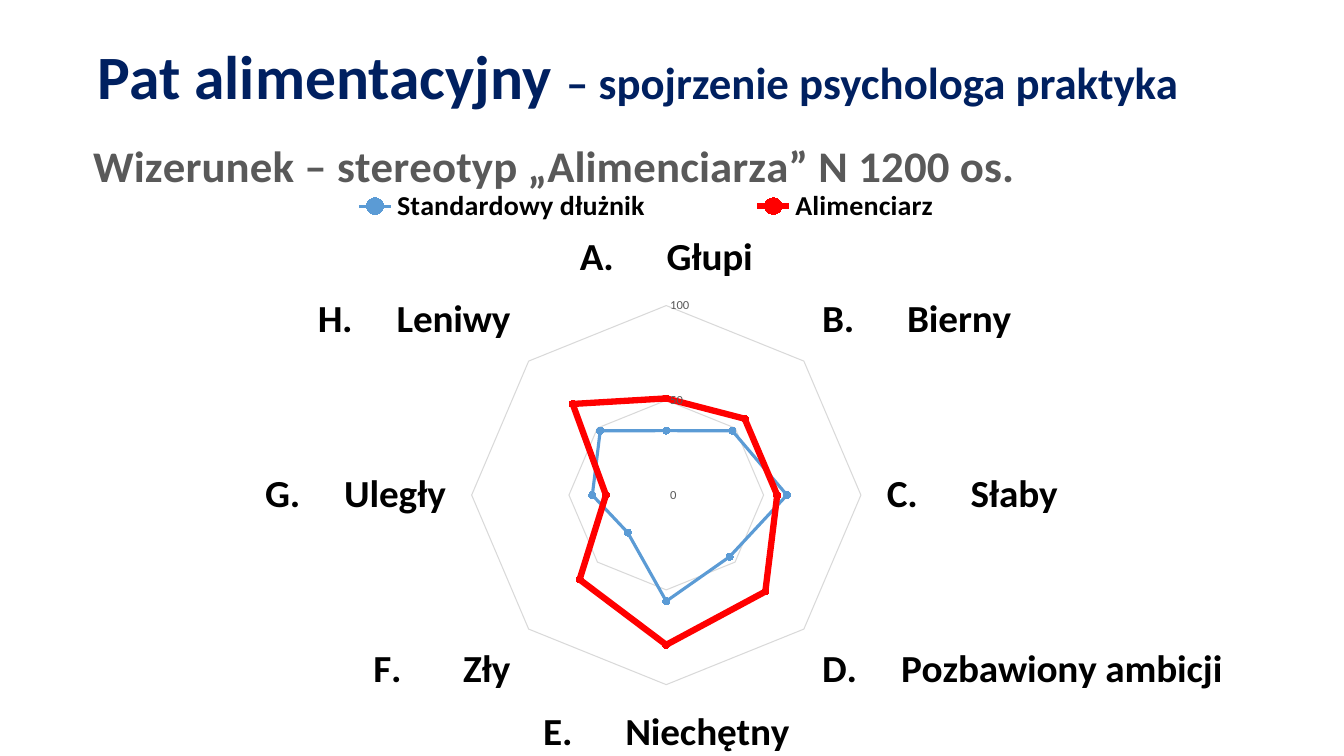
"""Builds a slide with a radar chart comparing two debtor stereotypes."""
from dataclasses import dataclass
from typing import Any, NamedTuple

from lxml.etree import SubElement
from pptx import Presentation
from pptx.chart.data import CategoryChartData
from pptx.dml.color import RGBColor
from pptx.enum.chart import XL_CHART_TYPE, XL_LEGEND_POSITION, XL_MARKER_STYLE, XL_TICK_MARK
from pptx.enum.text import MSO_ANCHOR, MSO_AUTO_SIZE, PP_ALIGN
from pptx.oxml import parse_xml
from pptx.oxml.ns import nsdecls, qn
from pptx.util import Inches, Pt

COLOURS = {
    "navy": "002060",
    "black": "000000",
    "grey": "595959",
    "grid": "D9D9D9",
    "blue": "5B9BD5",
    "red": "FF0000",
}
FONT = "Calibri"
SLIDE_WIDTH, SLIDE_HEIGHT = Inches(13.33), Inches(7.5)


class Share(NamedTuple):
    """Left, top, width and height as percentages of the container."""
    left: float
    top: float
    width: float | None = None
    height: float | None = None


class Trait(NamedTuple):
    """A radar axis: its name, label gap and the two scores."""
    name: str
    gap: int
    debtor: int
    alimony: int


@dataclass
class Profile:
    """A radar series and its look."""
    name: str
    field: str
    colour: str
    weight: float


TITLE_SHARE = Share(6.9, 5.33, 86.27, 10.27)
CHART_SHARE = Share(5.18, 15.6, 87.92, 84.4)
PLOT_SHARE = Share(33.3, 30.2, 34.4, 61)
HEADING_SHARE = Share(1.3, 1.5)
LEGEND_SHARE = Share(15.8, 10.2, 66, 8)

TRAITS = [
    Trait("Głupi", 5, 34, 51),
    Trait("Bierny", 5, 48, 57),
    Trait("Słaby", 5, 62, 57),
    Trait("Pozbawiony ambicji", 4, 46, 72),
    Trait("Niechętny", 5, 56, 79),
    Trait("Zły", 6, 28, 63),
    Trait("Uległy", 4, 38, 31),
    Trait("Leniwy", 4, 48, 68),
]
PROFILES = [
    Profile("Standardowy dłużnik", "debtor", "blue", 2.25),
    Profile("Alimenciarz", "alimony", "red", 4.5),
]
TITLE_SPANS = [("Pat alimentacyjny ", 44), ("– spojrzenie psychologa praktyka", 32)]


def colour(name: str) -> RGBColor:
    """Looks up a named colour."""
    return RGBColor.from_string(COLOURS[name])


def style_font(font: Any, size: float, tint: str, bold: bool = False) -> None:
    """Applies face, size, weight and colour to a font."""
    for key, value in {"name": FONT, "size": Pt(size), "bold": bold}.items():
        setattr(font, key, value)
    font.color.rgb = colour(tint)


def style_line(line: Any, tint: str, weight: float) -> None:
    """Applies colour and width to a line."""
    line.color.rgb = colour(tint)
    line.width = Pt(weight)


def slide_box(share: Share) -> list[int]:
    """Turns a share of the slide into lengths."""
    sizes = (SLIDE_WIDTH, SLIDE_HEIGHT) * 2
    return [round(size * part / 100) for size, part in zip(sizes, share)]


def place_part(part: Any, share: Share, inner: bool = False) -> None:
    """Fixes a chart part at a share of the chart."""
    for layout in part.findall(qn("c:layout")):
        part.remove(layout)
    layout = parse_xml(f"<c:layout {nsdecls('c')}><c:manualLayout/></c:layout>")
    manual = layout[0]
    values = {"layoutTarget": "inner"} if inner else {}
    values |= {"xMode": "edge", "yMode": "edge"}
    values |= {key: f"{value / 100:.3f}" for key, value in zip("xywh", share) if value is not None}
    for key, value in values.items():
        SubElement(manual, qn(f"c:{key}")).set("val", value)
    overlay = part.find(qn("c:overlay"))
    part.insert(0 if overlay is None else part.index(overlay), layout)


def write_title(box: Any) -> None:
    """Moves and fills the title placeholder."""
    for key, value in zip(("left", "top", "width", "height"), slide_box(TITLE_SHARE)):
        setattr(box, key, value)
    frame = box.text_frame
    settings = {
        "word_wrap": True,
        "auto_size": MSO_AUTO_SIZE.NONE,
        "vertical_anchor": MSO_ANCHOR.MIDDLE,
    }
    margins = {f"margin_{side}": Inches(0.05) for side in ("left", "top", "right", "bottom")}
    for key, value in (settings | margins).items():
        setattr(frame, key, value)
    para = frame.paragraphs[0]
    para.alignment, para.line_spacing = PP_ALIGN.LEFT, 0.9
    for text, size in TITLE_SPANS:
        span = para.add_run()
        span.text = text
        style_font(span.font, size, "navy", True)


def radar_data() -> CategoryChartData:
    """Collects lettered categories and scores."""
    data = CategoryChartData()
    data.categories = [
        f"{letter}.{' ' * trait.gap} {trait.name}" for letter, trait in zip("ABCDEFGH", TRAITS)
    ]
    for profile in PROFILES:
        data.add_series(profile.name, [getattr(trait, profile.field) for trait in TRAITS])
    return data


def style_axes(chart: Any) -> None:
    """Formats the spokes and the scale."""
    spokes, scale = chart.category_axis, chart.value_axis
    for axis in (spokes, scale):
        axis.major_tick_mark = axis.minor_tick_mark = XL_TICK_MARK.NONE
    spokes.has_major_gridlines = False
    style_font(spokes.tick_labels.font, 28, "black", True)
    style_line(spokes.format.line, "grid", 0.75)
    limits = {"minimum_scale": 0, "maximum_scale": 100, "major_unit": 50}
    for key, value in (limits | {"has_major_gridlines": True}).items():
        setattr(scale, key, value)
    style_font(scale.tick_labels.font, 9, "grey")
    scale.format.line.fill.background()
    style_line(scale.major_gridlines.format.line, "grid", 0.75)


def style_profiles(chart: Any) -> None:
    """Formats the lines and markers of the series."""
    for series, profile in zip(chart.plots[0].series, PROFILES):
        series.smooth = False
        style_line(series.format.line, profile.colour, profile.weight)
        marker = series.marker
        marker.style, marker.size = XL_MARKER_STYLE.CIRCLE, 5
        marker.format.fill.solid()
        marker.format.fill.fore_color.rgb = colour(profile.colour)
        style_line(marker.format.line, profile.colour, 0.75)


def draw_radar(page: Any) -> None:
    """Adds the radar chart with its heading and legend."""
    frame = page.shapes.add_chart(
        XL_CHART_TYPE.RADAR_MARKERS, *slide_box(CHART_SHARE), radar_data()
    )
    chart = frame.chart
    style_font(chart.font, 10, "black")
    chart.plots[0].vary_by_categories = False
    heading = chart.chart_title
    heading.text_frame.text = "Wizerunek – stereotyp „Alimenciarza” N 1200 os."
    style_font(heading.text_frame.paragraphs[0].runs[0].font, 32, "grey", True)
    chart.has_legend = True
    legend = chart.legend
    legend.position, legend.include_in_layout = XL_LEGEND_POSITION.TOP, False
    style_font(legend.font, 20, "black", True)
    style_axes(chart)
    style_profiles(chart)
    space = chart.element
    place_part(space.find(f".//{qn('c:plotArea')}"), PLOT_SHARE, True)
    place_part(space.find(f"{qn('c:chart')}/{qn('c:title')}"), HEADING_SHARE)
    place_part(space.find(f".//{qn('c:legend')}"), LEGEND_SHARE)


def main() -> None:
    """Builds and saves the deck."""
    deck = Presentation()
    deck.slide_width, deck.slide_height = SLIDE_WIDTH, SLIDE_HEIGHT
    page = deck.slides.add_slide(deck.slide_layouts[5])
    write_title(page.shapes.title)
    draw_radar(page)
    deck.save("out.pptx")


if __name__ == "__main__":
    main()
